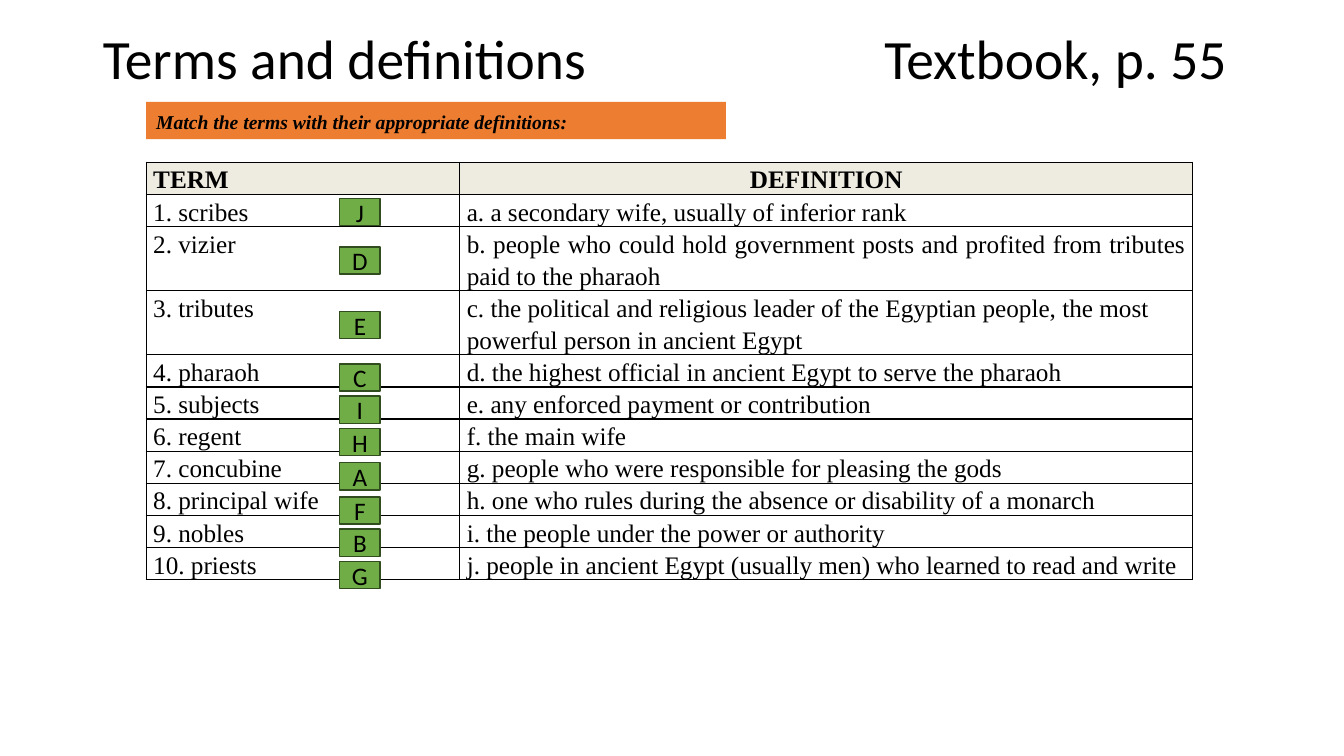
from lxml.etree import SubElement
from pptx import Presentation
from pptx.dml.color import RGBColor
from pptx.enum.shapes import MSO_SHAPE as Shape
from pptx.enum.text import MSO_ANCHOR as Anchor, MSO_AUTO_SIZE as AutoSize, PP_ALIGN as Align
from pptx.oxml.ns import qn
from pptx.util import Inches, Pt

TITLE = "Terms and definitions\tTextbook, p. 55"
TASK = "Match the terms with their appropriate definitions:"
HEADINGS = ("TERM", "DEFINITION")
# term, definition in the same row, lines of the row
ENTRIES = [
    ("1. scribes", "a. a secondary wife, usually of inferior rank", 1),
    ("2. vizier", "b. people who could hold government posts and profited from tributes "
                  "paid to the pharaoh", 2),
    ("3. tributes", "c. the political and religious leader of the Egyptian people, the most "
                    "powerful person in ancient Egypt", 2),
    ("4. pharaoh", "d. the highest official in ancient Egypt to serve the pharaoh", 1),
    ("5. subjects", "e. any enforced payment or contribution", 1),
    ("6. regent", "f. the main wife", 1),
    ("7. concubine", "g. people who were responsible for pleasing the gods", 1),
    ("8. principal wife", "h. one who rules during the absence or disability of a monarch", 1),
    ("9. nobles", "i. the people under the power or authority", 1),
    ("10. priests", "j. people in ancient Egypt (usually men) who learned to read and write", 1),
]
# matching letter, top of its box in inches
ANSWERS = [("J", 1.97), ("D", 2.45), ("E", 3.09), ("C", 3.61), ("I", 3.93),
           ("H", 4.25), ("A", 4.59), ("F", 4.93), ("B", 5.25), ("G", 5.57)]
LEFT_ALIGNED = ("c.", "h.")

BLACK = RGBColor(0x00, 0x00, 0x00)
ORANGE = RGBColor(0xED, 0x7D, 0x31)
GREEN = RGBColor(0x70, 0xAD, 0x47)
DARK_GREEN = RGBColor(0x31, 0x4C, 0x1F)
BEIGE = RGBColor(0xEE, 0xEC, 0xE1)
SANS, SERIF = "Calibri", "Times New Roman"

TABLE_LEFT = 1.45
COLUMN_WIDTHS = (3.11, 7.27)
LINE_HEIGHT = 0.29


def write(text_frame, text, size, font, align, spacing=None, bold=False, italic=False):
    text_frame.text = text
    paragraph = text_frame.paragraphs[0]
    paragraph.alignment = align
    if spacing:
        paragraph.line_spacing = spacing
    for run in paragraph.runs:
        run.font.size = Pt(size)
        run.font.name = font
        run.font.bold = bold
        run.font.italic = italic
        run.font.color.rgb = BLACK
    return paragraph


def add_box(slide, left, top, width, height, color, line=None):
    box = slide.shapes.add_shape(Shape.RECTANGLE, Inches(left), Inches(top),
                                 Inches(width), Inches(height))
    box.shadow.inherit = False
    box.fill.solid()
    box.fill.fore_color.rgb = color
    if line is None:
        box.line.fill.background()
    else:
        box.line.color.rgb = line
        box.line.width = Pt(1)
    return box


def add_borders(cell):
    properties = cell._tc.get_or_add_tcPr()
    for side in ("a:lnL", "a:lnR", "a:lnT", "a:lnB"):
        border = SubElement(properties, qn(side), w=str(Pt(1)))
        fill = SubElement(border, qn("a:solidFill"))
        SubElement(fill, qn("a:srgbClr"), val=str(BLACK))


def add_title(slide):
    title = slide.shapes.title
    title.left, title.top = Inches(0.92), Inches(0.4)
    title.width, title.height = Inches(11.5), Inches(0.42)
    title.text_frame.auto_size = AutoSize.NONE
    title.text_frame.vertical_anchor = Anchor.MIDDLE
    paragraph = write(title.text_frame, TITLE, 39.6, SANS, Align.LEFT, 0.9)
    tabs = SubElement(paragraph._p.get_or_add_pPr(), qn("a:tabLst"))
    SubElement(tabs, qn("a:tab"), pos=str(Inches(7.75)), algn="l")


def add_terms_table(slide):
    rows = [(*HEADINGS, 1), *ENTRIES]
    height = LINE_HEIGHT * sum(lines for *_, lines in rows)
    table = slide.shapes.add_table(len(rows), 2, Inches(TABLE_LEFT), Inches(1.61),
                                   Inches(sum(COLUMN_WIDTHS)), Inches(height)).table
    table.horz_banding = False
    for column, width in zip(table.columns, COLUMN_WIDTHS):
        column.width = Inches(width)
    for row_index, (term, definition, lines) in enumerate(rows):
        is_header = row_index == 0
        table.rows[row_index].height = Inches(LINE_HEIGHT * lines)
        for column_index, text in enumerate((term, definition)):
            cell = table.cell(row_index, column_index)
            cell.margin_left = cell.margin_right = Inches(0.07)
            cell.margin_top = cell.margin_bottom = 0
            add_borders(cell)
            if is_header:
                cell.fill.solid()
                cell.fill.fore_color.rgb = BEIGE
            else:
                cell.fill.background()
            align = Align.JUSTIFY
            if text == HEADINGS[1]:
                align = Align.CENTER
            elif text.startswith(LEFT_ALIGNED):
                align = Align.LEFT
            write(cell.text_frame, text, 18, SERIF, align, 1.15, bold=is_header)


def add_task(slide):
    banner = add_box(slide, TABLE_LEFT, 1.01, 5.75, 0.37, ORANGE)
    banner.text_frame.vertical_anchor = Anchor.TOP
    banner.text_frame.auto_size = AutoSize.SHAPE_TO_FIT_TEXT
    write(banner.text_frame, TASK, 14, SERIF, Align.JUSTIFY, 1.15, bold=True, italic=True)


def add_answers(slide):
    for letter, top in ANSWERS:
        box = add_box(slide, 3.37, top, 0.4, 0.27, GREEN, DARK_GREEN)
        box.text_frame.vertical_anchor = Anchor.MIDDLE
        write(box.text_frame, letter, 18, SANS, Align.CENTER)


def main():
    presentation = Presentation()
    presentation.slide_width, presentation.slide_height = Inches(13.33), Inches(7.5)
    slide = presentation.slides.add_slide(presentation.slide_layouts[5])
    add_title(slide)
    add_terms_table(slide)
    add_task(slide)
    add_answers(slide)
    presentation.save("out.pptx")


if __name__ == "__main__":
    main()
